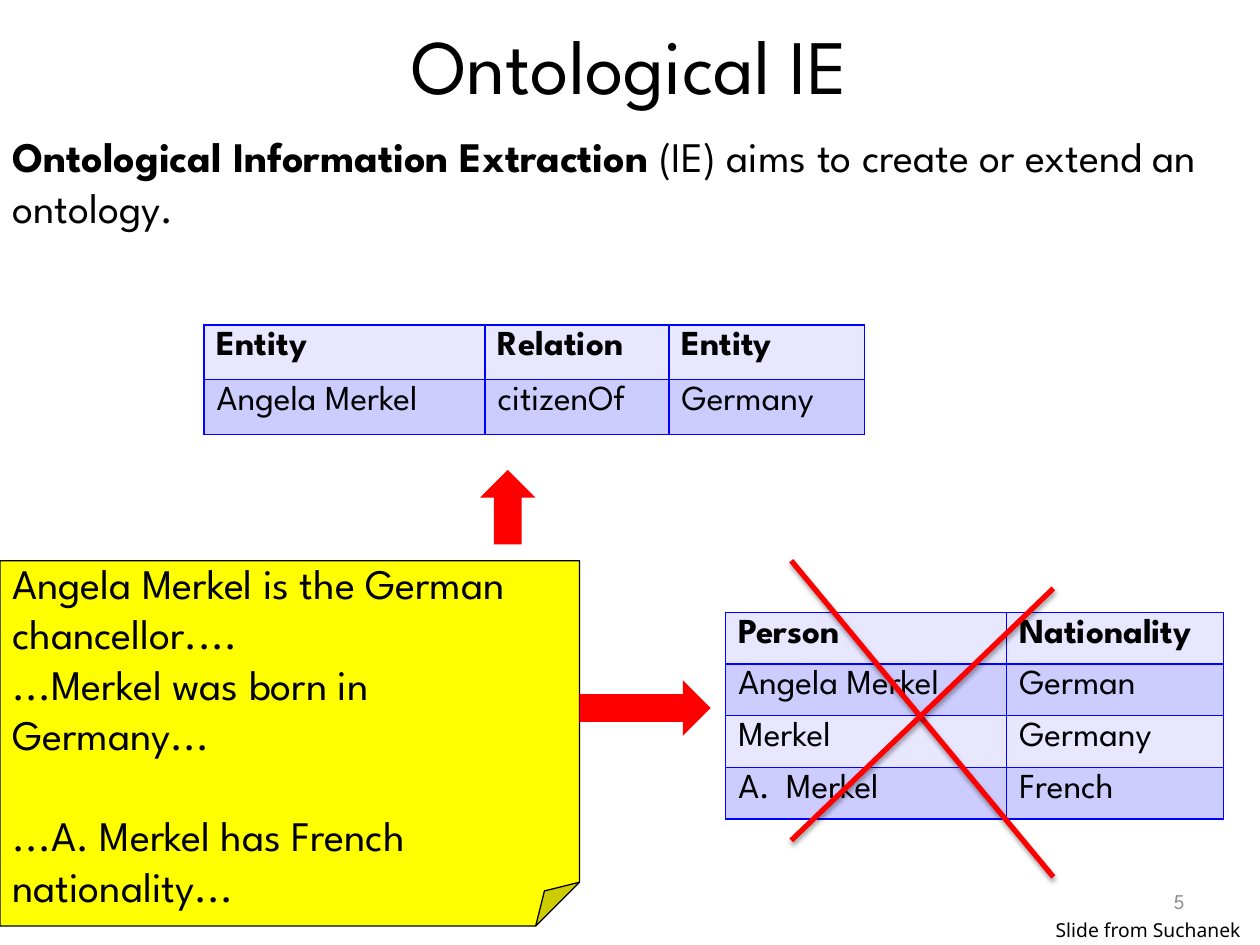
"""Build a slide that contrasts ontological facts with a plain extraction table."""
from dataclasses import dataclass

from lxml import etree
from pptx import Presentation
from pptx.dml.color import RGBColor
from pptx.enum.shapes import MSO_CONNECTOR, MSO_SHAPE
from pptx.enum.text import MSO_ANCHOR, MSO_AUTO_SIZE, PP_ALIGN
from pptx.oxml import parse_xml
from pptx.oxml.ns import nsdecls, qn
from pptx.util import Inches, Pt

LEFT, CENTER, RIGHT = PP_ALIGN.LEFT, PP_ALIGN.CENTER, PP_ALIGN.RIGHT
MIDDLE = MSO_ANCHOR.MIDDLE
FIT_SHAPE = MSO_AUTO_SIZE.SHAPE_TO_FIT_TEXT
STRAIGHT = MSO_CONNECTOR.STRAIGHT
FOLDED_CORNER = MSO_SHAPE.FOLDED_CORNER
RIGHT_ARROW, UP_ARROW = MSO_SHAPE.RIGHT_ARROW, MSO_SHAPE.UP_ARROW
TITLE_ONLY = 5


@dataclass(frozen=True)
class Theme:
    font: str = "League Spartan"
    credit_font: str = "Noto Sans"
    black: str = "000000"
    gray: str = "8C8C8C"
    red: str = "FF0000"
    yellow: str = "FFFF00"
    border: str = "0001FF"
    bands: tuple = ("E7E7FF", "CCCCFF")
    title_size: int = 44
    body_size: int = 24
    table_size: int = 20
    number_size: int = 12
    credit_size: int = 11


theme = Theme()


def write_text(paragraph, text, size=theme.body_size, font=theme.font,
               color=theme.black, bold=False, align=LEFT):
    paragraph.alignment = align
    run = paragraph.add_run()
    run.text = text
    run.font.size = Pt(size)
    run.font.name = font
    run.font.bold = bold
    run.font.color.rgb = RGBColor.from_string(color)


def add_fact_table(slide, left, top, column_widths, row_height, rows):
    table = slide.shapes.add_table(
        len(rows), len(column_widths), Inches(left), Inches(top),
        Inches(sum(column_widths)), Inches(row_height * len(rows))).table
    for column, width in zip(table.columns, column_widths):
        column.width = Inches(width)
    for row_index, row in enumerate(rows):
        for column_index, text in enumerate(row):
            cell = table.cell(row_index, column_index)
            write_text(cell.text_frame.paragraphs[0], text,
                       size=theme.table_size, bold=row_index == 0)
            properties = cell._tc.get_or_add_tcPr()
            for side in ("lnL", "lnR", "lnT", "lnB"):
                properties.append(parse_xml(
                    f'<a:{side} {nsdecls("a")} w="{Pt(1)}"><a:solidFill>'
                    f'<a:srgbClr val="{theme.border}"/></a:solidFill></a:{side}>'))
            cell.fill.solid()
            cell.fill.fore_color.rgb = RGBColor.from_string(theme.bands[row_index % 2])
    return table


presentation = Presentation()
presentation.slide_width = Inches(10)
presentation.slide_height = Inches(7.5)
slide = presentation.slides.add_slide(presentation.slide_layouts[TITLE_ONLY])

title = slide.shapes.title
title.left, title.top, title.width, title.height = (
    Inches(0.5), Inches(0), Inches(9), Inches(1.01))
title.text_frame.vertical_anchor = MIDDLE
write_text(title.text_frame.paragraphs[0], "Ontological IE",
           size=theme.title_size, align=CENTER)

nationality_table = add_fact_table(slide, 5.76, 4.86, (2.23, 1.72), 0.41, (
    ("Person", "Nationality"),
    ("Angela Merkel", "German"),
    ("Merkel", "Germany"),
    ("Merkel", "French"),
))
lettered = nationality_table.cell(3, 0).text_frame.paragraphs[0]._p.get_or_add_pPr()
lettered.set("marL", str(Inches(0.38)))
lettered.set("indent", str(Inches(-0.38)))
etree.SubElement(lettered, qn("a:buAutoNum"), type="alphaUcPeriod")

note = slide.shapes.add_shape(
    FOLDED_CORNER, Inches(0), Inches(4.45), Inches(4.6), Inches(2.9))
fold = note._element.spPr.find(qn("a:prstGeom")).get_or_add_avLst()
etree.SubElement(fold, qn("a:gd"), name="adj", fmla="val 12000")
note.shadow.inherit = False
note.fill.solid()
note.fill.fore_color.rgb = RGBColor.from_string(theme.yellow)
note.line.color.rgb = RGBColor.from_string(theme.black)
note.line.width = Pt(0.75)
note_frame = note.text_frame
note_frame.word_wrap = True
note_frame.vertical_anchor = MIDDLE
note_frame.margin_left = note_frame.margin_right = Inches(0.1)
note_frame.margin_top, note_frame.margin_bottom = Inches(0.2), Inches(0)
sentences = (
    ("Angela Merkel is the German chancellor....", 0),
    ("...Merkel was born in Germany...", 0),
    ("...A. Merkel has French nationality...", 29),
)
for index, (sentence, space_before) in enumerate(sentences):
    paragraph = note_frame.add_paragraph() if index else note_frame.paragraphs[0]
    paragraph.space_before = Pt(space_before)
    write_text(paragraph, sentence)

arrows = (
    (RIGHT_ARROW, 4.6, 5.4, 1.04, 0.44),
    (UP_ARROW, 3.81, 3.73, 0.44, 0.59),
)
for kind, *box in arrows:
    arrow = slide.shapes.add_shape(kind, *map(Inches, box))
    arrow.shadow.inherit = False
    arrow.fill.solid()
    arrow.fill.fore_color.rgb = RGBColor.from_string(theme.red)
    arrow.line.fill.background()

for start_y, end_y in ((4.45, 6.96), (6.67, 4.67)):
    stroke = slide.shapes.add_connector(
        STRAIGHT, Inches(6.28), Inches(start_y), Inches(8.36), Inches(end_y))
    stroke.line.color.rgb = RGBColor.from_string(theme.red)
    stroke.line.width = Pt(3)
    stroke._element.spPr.append(parse_xml(
        f'<a:effectLst {nsdecls("a")}><a:outerShdw blurRad="{Pt(3.1)}" '
        f'dist="{Pt(1.6)}" dir="5400000" rotWithShape="0">'
        f'<a:srgbClr val="{theme.black}"><a:alpha val="38000"/></a:srgbClr>'
        '</a:outerShdw></a:effectLst>'))

number = slide.shapes.add_textbox(Inches(7.17), Inches(6.95), Inches(2.33), Inches(0.4))
number.text_frame.word_wrap = True
number.text_frame.vertical_anchor = MIDDLE
write_text(number.text_frame.paragraphs[0], "5", size=theme.number_size,
           color=theme.gray, align=RIGHT)

definition = slide.shapes.add_textbox(Inches(0), Inches(0.99), Inches(10), Inches(0.91))
definition.text_frame.word_wrap = True
definition.text_frame.auto_size = FIT_SHAPE
definition_paragraph = definition.text_frame.paragraphs[0]
write_text(definition_paragraph, "Ontological Information Extraction", bold=True)
write_text(definition_paragraph, " (IE) aims to create or extend an ontology.")

add_fact_table(slide, 1.62, 2.58, (2.23, 1.46, 1.55), 0.43, (
    ("Entity", "Relation", "Entity"),
    ("Angela Merkel", "citizenOf", "Germany"),
))

credit = slide.shapes.add_textbox(Inches(8.28), Inches(7.24), Inches(1.72), Inches(0.29))
credit.text_frame.word_wrap = False
credit.text_frame.auto_size = FIT_SHAPE
write_text(credit.text_frame.paragraphs[0], "Slide from Suchanek",
           size=theme.credit_size, font=theme.credit_font)

presentation.save("out.pptx")
